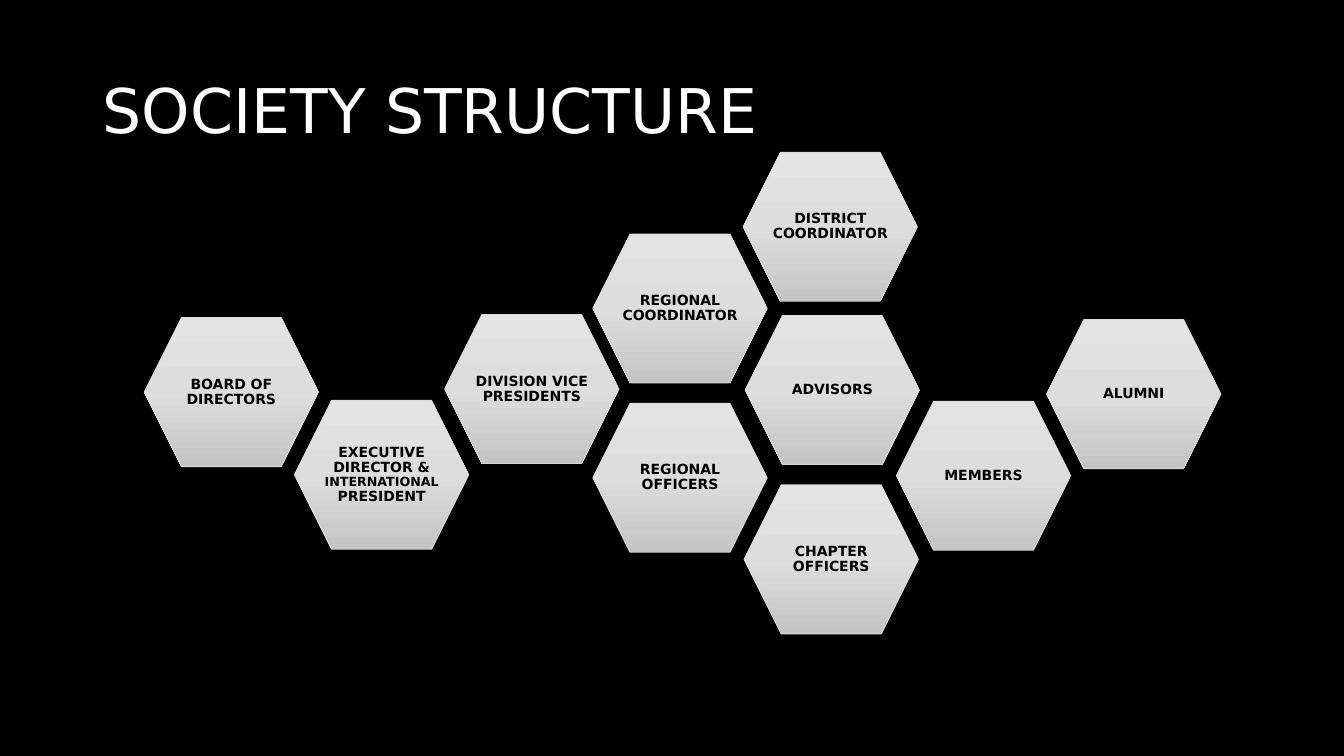
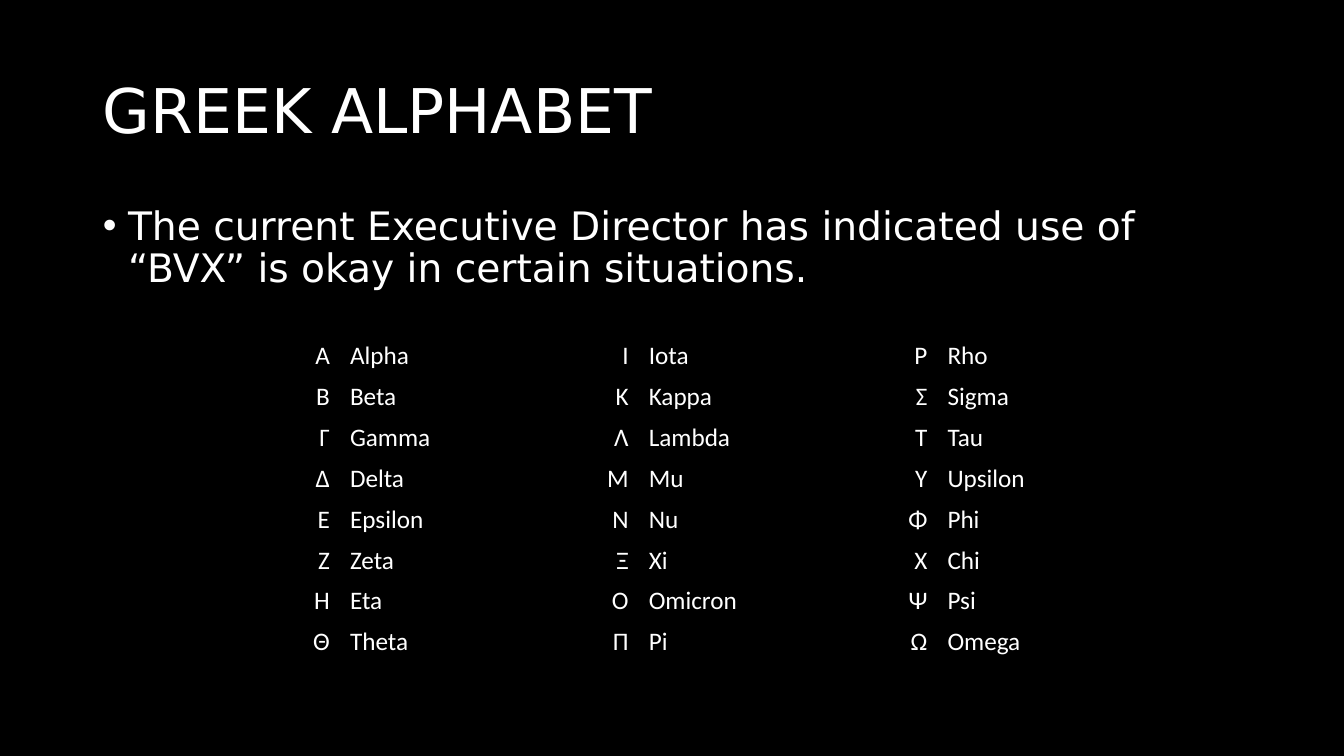
from copy import deepcopy
from dataclasses import dataclass

from pptx import Presentation
from pptx.dml.color import RGBColor
from pptx.enum.shapes import MSO_SHAPE
from pptx.enum.text import MSO_ANCHOR, MSO_AUTO_SIZE, PP_ALIGN
from pptx.oxml.ns import qn
from pptx.util import Inches, Pt

HEXAGON = MSO_SHAPE.HEXAGON
MIDDLE, TOP = MSO_ANCHOR.MIDDLE, MSO_ANCHOR.TOP
LEFT, CENTER, RIGHT = PP_ALIGN.LEFT, PP_ALIGN.CENTER, PP_ALIGN.RIGHT
NO_AUTOFIT = MSO_AUTO_SIZE.NONE

BLACK, WHITE, OUTLINE = "000000", "FFFFFF", "DDDDDD"
GRADIENT = ((0, "E3E3E3"), (0.5, "DDDDDD"), (1, "C4C4C4"))
HEADING_FONT, TABLE_FONT = "DejaVu Sans", "Calibri"
CONTENT_LAYOUT, TITLE_LAYOUT = 1, 5
PLAIN_TABLE_STYLE = "{2D5ABB26-0587-4C30-8999-92F81FD0307C}"

MARGIN_LEFT, CONTENT_WIDTH = 0.92, 11.5
HEXAGON_WIDTH, HEXAGON_HEIGHT = 1.73, 1.48


@dataclass(frozen=True)
class Role:
    left: float
    top: float
    runs: tuple[tuple[str, int], ...]


def role(left: float, top: float, name: str) -> Role:
    return Role(left, top, ((name, 10),))


ROLES = (
    role(1.43, 3.15, "BOARD OF DIRECTORS"),
    Role(2.92, 3.97, (("EXECUTIVE DIRECTOR & ", 10), ("INTERNATIONAL ", 9), ("PRESIDENT", 10))),
    role(4.41, 3.12, "DIVISION VICE PRESIDENTS"),
    role(5.88, 2.32, "REGIONAL COORDINATOR"),
    role(5.88, 4, "REGIONAL OFFICERS"),
    role(7.37, 1.51, "DISTRICT COORDINATOR"),
    role(7.39, 3.13, "ADVISORS"),
    role(7.38, 4.81, "CHAPTER OFFICERS"),
    role(8.89, 3.98, "MEMBERS"),
    role(10.38, 3.17, "ALUMNI"),
)

LETTER_COLUMNS = (
    ("ΑΒΓΔΕΖΗΘ", ("Alpha", "Beta", "Gamma", "Delta", "Epsilon", "Zeta", "Eta", "Theta")),
    ("ΙΚΛΜΝΞΟΠ", ("Iota", "Kappa", "Lambda", "Mu", "Nu", "Xi", "Omicron", "Pi")),
    ("ΡΣΤΥΦΧΨΩ", ("Rho", "Sigma", "Tau", "Upsilon", "Phi", "Chi", "Psi", "Omega")),
)


def rgb(color: str) -> RGBColor:
    return RGBColor.from_string(color)


def add_run(paragraph, text: str, *, size: float, font: str = HEADING_FONT,
            color: str = WHITE, bold: bool = False, align=LEFT, line_spacing: float = 0.9):
    paragraph.alignment = align
    paragraph.line_spacing = line_spacing
    run = paragraph.add_run()
    run.text = text
    run.font.size = Pt(size)
    run.font.name = font
    run.font.bold = bold
    run.font.color.rgb = rgb(color)


def place_placeholder(placeholder, top: float, height: float, anchor):
    """Move and format a placeholder and return its first paragraph."""
    placeholder.left, placeholder.top = Inches(MARGIN_LEFT), Inches(top)
    placeholder.width, placeholder.height = Inches(CONTENT_WIDTH), Inches(height)
    frame = placeholder.text_frame
    frame.word_wrap = True
    frame.auto_size = NO_AUTOFIT
    frame.vertical_anchor = anchor
    return frame.paragraphs[0]


def add_titled_slide(presentation, layout: int, title: str):
    slide = presentation.slides.add_slide(presentation.slide_layouts[layout])
    paragraph = place_placeholder(slide.shapes.title, 0.4, 1.45, MIDDLE)
    add_run(paragraph, title, size=44)
    return slide


def fill_gradient(shape):
    """Fill from top to bottom with the three shared grey stops."""
    shape.fill.gradient()
    shape.fill.gradient_angle = 270
    stop_list = shape._element.spPr.find(".//" + qn("a:gsLst"))
    stop_list.append(deepcopy(stop_list[0]))
    for stop, (position, color) in zip(shape.fill.gradient_stops, GRADIENT):
        stop.position = position
        stop.color.rgb = rgb(color)


def add_role(slide, item: Role):
    shape = slide.shapes.add_shape(HEXAGON, Inches(item.left), Inches(item.top),
                                   Inches(HEXAGON_WIDTH), Inches(HEXAGON_HEIGHT))
    shape.shadow.inherit = False
    shape.adjustments[0] = 0.25
    shape.line.color.rgb = rgb(OUTLINE)
    shape.line.width = Pt(0.5)
    fill_gradient(shape)
    frame = shape.text_frame
    frame.word_wrap = True
    frame.vertical_anchor = MIDDLE
    frame.margin_left = frame.margin_right = 0
    frame.margin_top = frame.margin_bottom = Inches(0.01)
    for text, size in item.runs:
        add_run(frame.paragraphs[0], text, size=size, color=BLACK, bold=True, align=CENTER)


def add_structure_slide(presentation):
    slide = add_titled_slide(presentation, TITLE_LAYOUT, "SOCIETY STRUCTURE")
    for item in ROLES:
        add_role(slide, item)


def fill_cell(cell, text: str, align):
    cell.fill.background()
    add_run(cell.text_frame.paragraphs[0], text, size=18, font=TABLE_FONT,
            align=align, line_spacing=1.0)


def add_alphabet_table(slide):
    row_count, column_count = len(LETTER_COLUMNS[0][0]), 2 * len(LETTER_COLUMNS)
    table = slide.shapes.add_table(row_count, column_count, Inches(1.89), Inches(3.33),
                                   Inches(8.89), Inches(3.24)).table
    table.first_row = table.horz_banding = False
    table._tbl.tblPr.find(qn("a:tableStyleId")).text = PLAIN_TABLE_STYLE
    for group, (letters, names) in enumerate(LETTER_COLUMNS):
        for row, (letter, name) in enumerate(zip(letters, names)):
            fill_cell(table.cell(row, 2 * group), letter, RIGHT)
            fill_cell(table.cell(row, 2 * group + 1), name, LEFT)


def add_alphabet_slide(presentation):
    slide = add_titled_slide(presentation, CONTENT_LAYOUT, "GREEK ALPHABET")
    paragraph = place_placeholder(slide.placeholders[1], 2, 4.76, TOP)
    add_run(paragraph, "The current Executive Director has indicated use of “BVX” "
            "is okay in certain situations.", size=28)
    paragraph.space_before = Pt(10)
    properties = paragraph._p.get_or_add_pPr()
    properties.set("marL", str(Inches(0.25)))
    properties.set("indent", str(Inches(-0.25)))
    add_alphabet_table(slide)


def main():
    presentation = Presentation()
    presentation.slide_width, presentation.slide_height = Inches(13.33), Inches(7.5)
    background = presentation.slide_master.background.fill
    background.solid()
    background.fore_color.rgb = rgb(BLACK)
    add_structure_slide(presentation)
    add_alphabet_slide(presentation)
    presentation.save("out.pptx")


if __name__ == "__main__":
    main()
